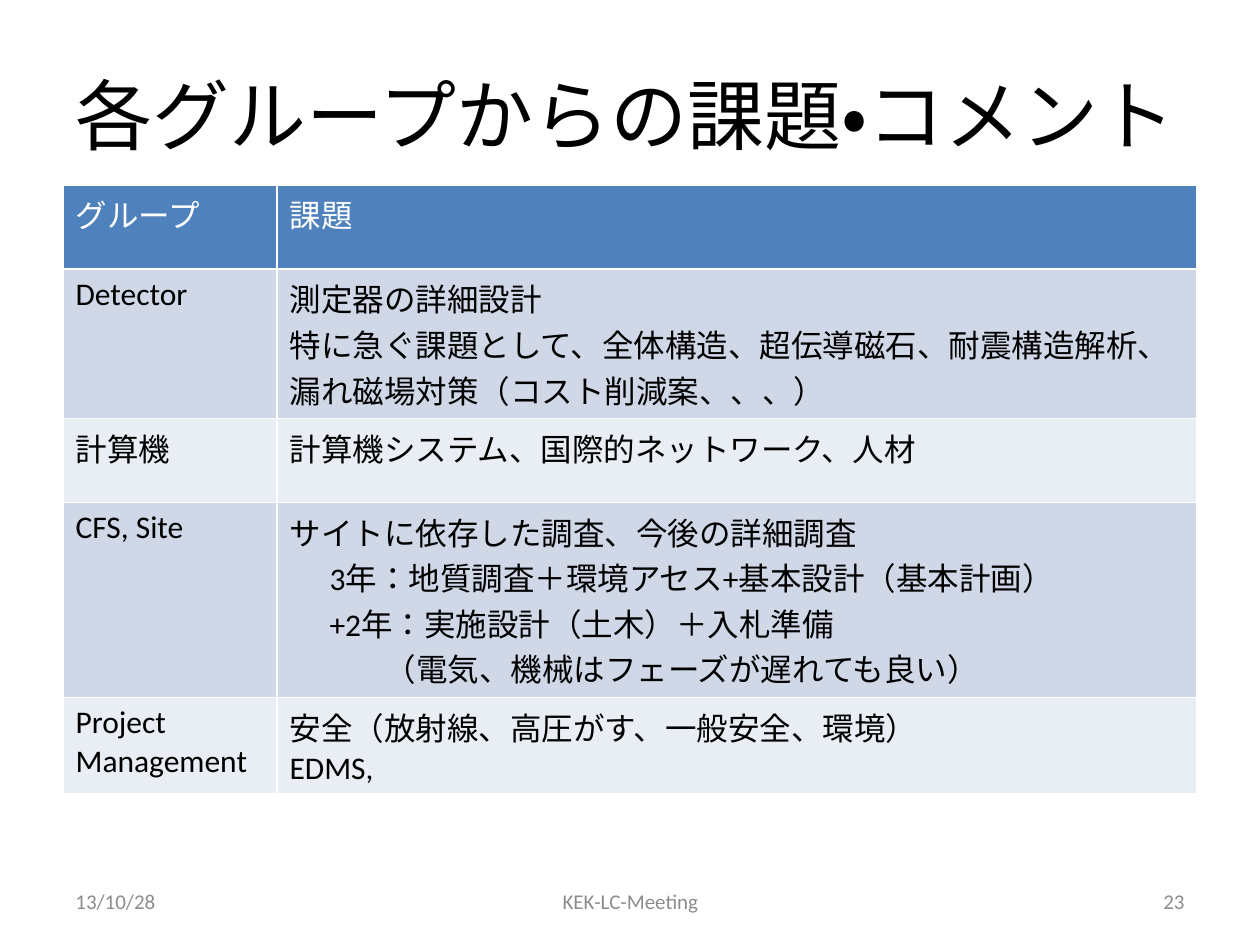
from typing import NamedTuple

from pptx import Presentation
from pptx import util as u
from pptx.dml.color import RGBColor
from pptx.enum import lang, text

COLORS = {"black": "000000", "white": "FFFFFF", "header": "4F81BD",
          "odd": "D0D8E8", "even": "E9EDF4", "footer": "8C8C8C"}
FONT = "Calibri"
LEFT, CENTER, RIGHT = text.PP_ALIGN.LEFT, text.PP_ALIGN.CENTER, text.PP_ALIGN.RIGHT


class Line(NamedTuple):
    words: str
    indent: int = 0


class Row(NamedTuple):
    group: str
    issues: list[Line]


class Footer(NamedTuple):
    words: str
    left: int
    width: int
    align: text.PP_ALIGN


ROWS = [
    Row("グループ", [Line("課題")]),
    Row("Detector", [
        Line("測定器の詳細設計"),
        Line("特に急ぐ課題として、全体構造、超伝導磁石、耐震構造解析、"
             "漏れ磁場対策（コスト削減案、、、）")]),
    Row("計算機", [Line("計算機システム、国際的ネットワーク、人材")]),
    Row("CFS, Site", [
        Line("サイトに依存した調査、今後の詳細調査"),
        Line("3年：地質調査＋環境アセス+基本設計（基本計画）", 40),
        Line("+2年：実施設計（土木）＋入札準備", 40),
        Line("（電気、機械はフェーズが遅れても良い）", 95)]),
    Row("Project Management", [
        Line("安全（放射線、高圧がす、一般安全、環境）"), Line("EDMS,")]),
]
FOOTERS = [
    Footer("13/10/28", 63, 294, LEFT),
    Footer("KEK-LC-Meeting", 431, 399, CENTER),
    Footer("23", 903, 294, RIGHT),
]


def px(n: int) -> u.Emu:
    return u.Emu(round(n * 914400 / 126))


def write(tf, lines: list[Line], *, size: int, color: str = "black",
          align: text.PP_ALIGN = LEFT) -> None:
    for i, line in enumerate(lines):
        p = tf.paragraphs[0] if i == 0 else tf.add_paragraph()
        p.alignment = align
        if line.indent:
            p._p.get_or_add_pPr().set("marL", str(px(line.indent)))
        r = p.add_run()
        r.text = line.words
        r.font.name, r.font.size, r.font.bold = FONT, u.Pt(size), False
        r.font.language_id = lang.MSO_LANGUAGE_ID.JAPANESE
        r.font.color.rgb = RGBColor.from_string(COLORS[color])


def add_issue_table(slide, rows: list[Row]) -> None:
    height = 84
    table = slide.shapes.add_table(len(rows), 2, px(63), px(185), px(1134),
                                   px(height * len(rows))).table
    table.columns[0].width, table.columns[1].width = px(214), px(920)
    for i, row in enumerate(rows):
        table.rows[i].height = px(height)
        fill = "header" if i == 0 else "odd" if i % 2 else "even"
        for j, lines in enumerate(([Line(row.group)], row.issues)):
            cell = table.cell(i, j)
            cell.fill.solid()
            cell.fill.fore_color.rgb = RGBColor.from_string(COLORS[fill])
            write(cell.text_frame, lines, size=18, color="black" if i else "white")


def add_footer(slide, footer: Footer) -> None:
    tf = slide.shapes.add_textbox(px(footer.left), px(876), px(footer.width),
                                  px(50)).text_frame
    tf.word_wrap = True
    tf.vertical_anchor = text.MSO_ANCHOR.MIDDLE
    write(tf, [Line(footer.words)], size=12, color="footer", align=footer.align)


def main() -> None:
    prs = Presentation()
    prs.slide_width, prs.slide_height = px(1260), px(945)
    slide = prs.slides.add_slide(prs.slide_layouts[5])

    # Title, kept on one line
    title = slide.shapes.title
    title.left, title.top, title.width, title.height = px(59), px(35), px(1134), px(158)
    tf = title.text_frame
    tf.word_wrap = False
    tf.vertical_anchor = text.MSO_ANCHOR.MIDDLE
    write(tf, [Line("各グループからの課題・コメント")], size=44, align=CENTER)

    # Issues by group
    add_issue_table(slide, ROWS)

    # Date, meeting and page number
    for footer in FOOTERS:
        add_footer(slide, footer)

    prs.save("out.pptx")


if __name__ == "__main__":
    main()
